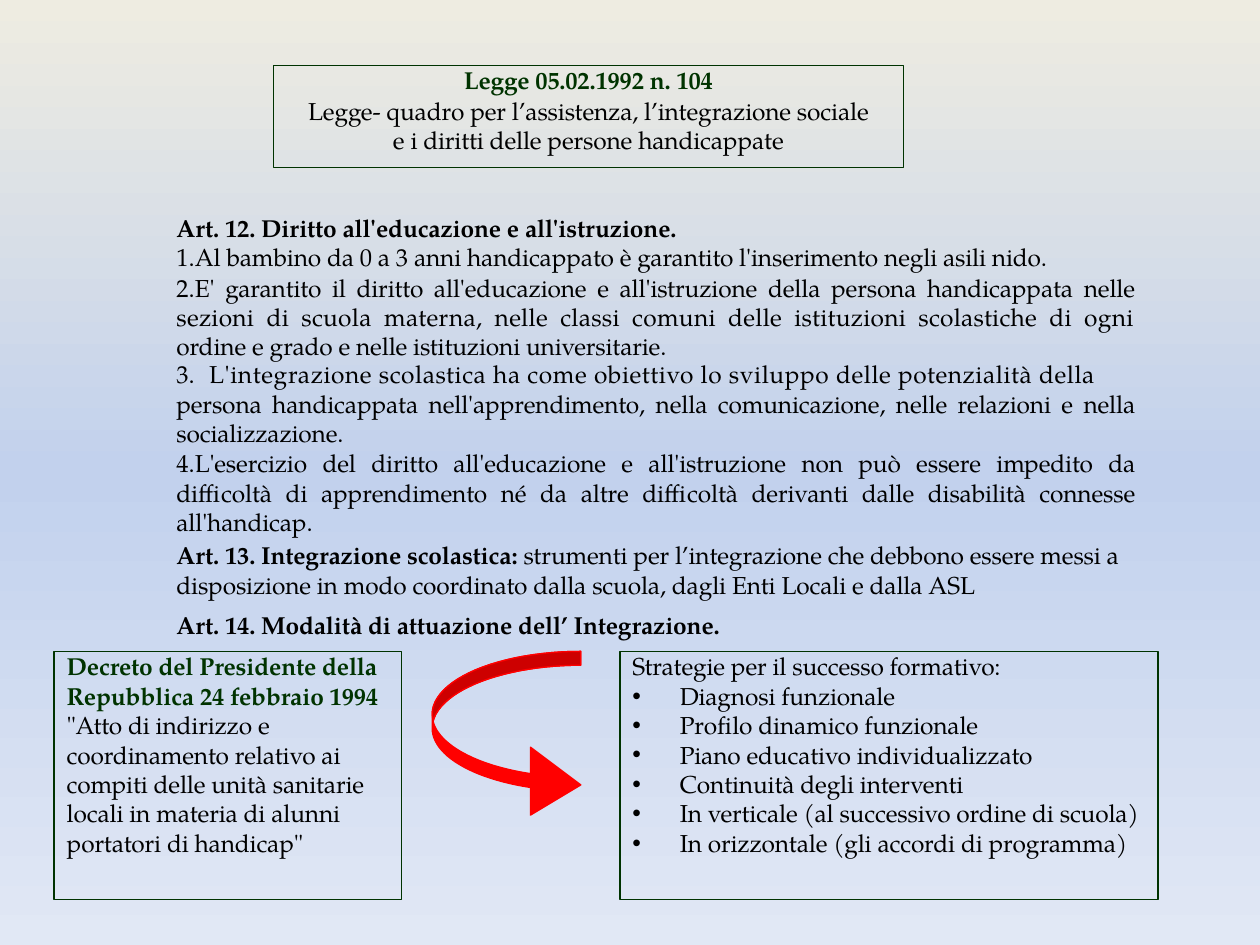
import copy
import math

import pptx
import pptx.dml.color
import pptx.enum.shapes
import pptx.enum.text
import pptx.oxml.ns
import pptx.util
from lxml import etree

CELL = pptx.util.Inches(0.1)
COLUMNS, ROWS = 100, 75
FONT = "TeX Gyre Pagella"
GREEN, BLACK, RED, DARK_RED = "003300", "000000", "FF0000", "CD0000"
ALIGN = pptx.enum.text.PP_ALIGN
BACKGROUND_STOPS = [(0, "EEECE1"), (0.5, "C2D1ED"), (1, "E1E8F5")]

STRATEGIES = [
    "Diagnosi funzionale",
    "Profilo dinamico funzionale",
    "Piano educativo individualizzato",
    "Continuità degli interventi",
    "In verticale (al successivo ordine di scuola)",
    "In orizzontale (gli accordi di programma)",
]


def color(value):
    return pptx.dml.color.RGBColor.from_string(value)


def cells(count):
    return pptx.util.Emu(round(count * CELL))


def set_background(slide):
    fill = slide.background.fill
    fill.gradient()
    fill.gradient_angle = 270
    stop_list = slide._element.find(".//" + pptx.oxml.ns.qn("a:gsLst"))
    stop_list.append(copy.deepcopy(stop_list[-1]))
    for stop, (position, value) in zip(fill.gradient_stops, BACKGROUND_STOPS):
        stop.position = position
        stop.color.rgb = color(value)


def prepare_frame(shape):
    frame = shape.text_frame
    frame.word_wrap = True
    frame.vertical_anchor = pptx.enum.text.MSO_ANCHOR.TOP
    frame.margin_left = frame.margin_right = 0
    frame.margin_top = frame.margin_bottom = 0
    return frame


def add_box(slide, left, top, width, height):
    shape = slide.shapes.add_shape(
        pptx.enum.shapes.MSO_SHAPE.RECTANGLE, *map(cells, (left, top, width, height))
    )
    shape.shadow.inherit = False
    shape.fill.background()
    shape.line.color.rgb = color(GREEN)
    shape.line.width = pptx.util.Pt(0.75)
    return prepare_frame(shape)


def add_text_area(slide, left, top, width, height):
    shape = slide.shapes.add_textbox(*map(cells, (left, top, width, height)))
    return prepare_frame(shape)


def add_run(paragraph, text, bold=False, value=BLACK, spacing=-10):
    run = paragraph.add_run()
    run.text = text
    run.font.name = FONT
    run.font.size = pptx.util.Pt(14)
    run.font.bold = bold
    run.font.color.rgb = color(value)
    run._r.get_or_add_rPr().set("spc", str(spacing))


def add_paragraph(frame, align=ALIGN.LEFT, line=None, before=0, left=0, first=0, right=0):
    started = len(frame.paragraphs) > 1 or frame.paragraphs[0].runs
    paragraph = frame.add_paragraph() if started else frame.paragraphs[0]
    paragraph.alignment = align
    if line:
        paragraph.line_spacing = pptx.util.Pt(line)
    paragraph.space_before = pptx.util.Pt(before)
    properties = paragraph._p.get_or_add_pPr()
    for name, count in (("marL", left), ("marR", right), ("indent", first)):
        properties.set(name, str(cells(count)))
    return paragraph


def add_mark(paragraph, tag, **attributes):
    properties = paragraph._p.get_or_add_pPr()
    mark = etree.SubElement(properties, pptx.oxml.ns.qn(tag))
    for name, value in attributes.items():
        mark.set(name, value)


def add_clause(frame, *runs, line=16.7, before=0, left=0.1, first=0, **numbering):
    paragraph = add_paragraph(frame, ALIGN.JUSTIFY, line, before, left, first)
    add_mark(paragraph, "a:buFont", typeface="+mj-lt")
    add_mark(paragraph, "a:buAutoNum", type="arabicPeriod", **numbering)
    for text, spacing in runs:
        add_run(paragraph, text, spacing=spacing)


def fill_heading(frame):
    paragraph = add_paragraph(frame, ALIGN.CENTER, 16.7)
    add_run(paragraph, "Legge 05.02.1992 n. 104", True, GREEN)
    paragraph = add_paragraph(frame, ALIGN.CENTER, 16.7, 0.6, left=2.3, right=2.3)
    add_run(paragraph, "Legge- quadro per l’assistenza, l’integrazione sociale "
                       "e i diritti delle persone handicappate")


def fill_articles(frame):
    paragraph = add_paragraph(frame, ALIGN.JUSTIFY, 16.8, left=0.1)
    add_run(paragraph, "Art. 12. Diritto all'educazione e all'istruzione.", True)
    add_clause(frame, ("Al bambino da 0 a 3 anni handicappato è garantito "
                       "l'inserimento negli asili nido.", -10), line=16.8)
    add_clause(
        frame,
        ("E' garantito il diritto all'educazione e all'istruzione della persona "
         "handicappata nelle ", -10),
        ("sezioni di scuola materna, nelle classi comuni delle istituzioni "
         "scolastiche di ogni ", 15),
        ("ordine e grado e nelle istituzioni universitarie.", -10),
        before=0.6,
    )
    add_clause(frame, ("L'integrazione scolastica ha come obiettivo lo sviluppo delle "
                       "potenzialità della", 30), line=16.2, left=2.7, first=-2.6)
    paragraph = add_paragraph(frame, ALIGN.JUSTIFY, left=0.1)
    add_run(paragraph, "persona handicappata nell'apprendimento, nella comunicazione, "
                       "nelle relazioni e nella socializzazione.")
    add_clause(frame, ("L'esercizio del diritto all'educazione e all'istruzione non può "
                       "essere impedito da difficoltà di apprendimento né da altre "
                       "difficoltà derivanti dalle disabilità connesse all'handicap.", -10),
               before=0.6, startAt="4")
    paragraph = add_paragraph(frame, before=2.2, left=0.1)
    add_run(paragraph, "Art. 13. Integrazione scolastica: ", True)
    add_run(paragraph, "strumenti per l’integrazione che debbono essere messi a disposizione "
                       "in modo coordinato dalla scuola, dagli Enti Locali e dalla ASL")
    paragraph = add_paragraph(frame, ALIGN.JUSTIFY, before=6.2, left=0.1)
    add_run(paragraph, "Art. 14. Modalità di attuazione dell’ Integrazione.", True)


def fill_strategies(frame):
    paragraph = add_paragraph(frame, line=16.8, left=1)
    add_run(paragraph, "Strategie per il successo formativo:")
    for strategy in STRATEGIES:
        paragraph = add_paragraph(frame, line=16.8, left=4.75, first=-3.75)
        add_mark(paragraph, "a:buFont", typeface="Arial")
        add_mark(paragraph, "a:buChar", char="•")
        add_run(paragraph, strategy)


def fill_decree(frame):
    paragraph = add_paragraph(frame, left=1)
    add_run(paragraph, "Decreto del Presidente della Repubblica 24 febbraio 1994 ", True, GREEN)
    add_run(paragraph, "\"Atto di indirizzo e coordinamento relativo ai compiti delle unità "
                       "sanitarie locali in materia di alunni portatori di handicap\"")


def arc(center_row, start, end, steps=24):
    angles = [math.radians(start + (end - start) * i / steps) for i in range(steps + 1)]
    return [(46.1 - 11.8 * math.cos(a), center_row + 5 * math.sin(a)) for a in angles]


def add_outline(slide, points, value):
    corners = [(cells(x), cells(y)) for x, y in points]
    builder = slide.shapes.build_freeform(*corners[0])
    builder.add_line_segments(corners[1:], close=True)
    shape = builder.convert_to_shape()
    shape.shadow.inherit = False
    shape.fill.solid()
    shape.fill.fore_color.rgb = color(value)
    shape.line.color.rgb = color(RED)
    shape.line.width = pptx.util.Pt(0.75)


def add_curved_arrow(slide):
    outer, inner, crossing, neck = 56.7, 57.8, 6.3, 70.2
    head = [(42.1, 64.7), (46.1, 62.3), (42.1, 59.3)]
    upper_edge = arc(outer, -90, 0)
    inner_edge = arc(inner, -crossing, -90)
    lower_band = arc(inner, 0, neck) + head + arc(outer, neck, crossing)
    add_outline(slide, upper_edge + lower_band + inner_edge, RED)
    add_outline(slide, upper_edge + inner_edge, DARK_RED)


def main():
    presentation = pptx.Presentation()
    presentation.slide_width = cells(COLUMNS)
    presentation.slide_height = cells(ROWS)
    slide = presentation.slides.add_slide(presentation.slide_layouts[6])
    set_background(slide)
    fill_heading(add_box(slide, 21.7, 5.2, 50, 8.1))
    fill_articles(add_text_area(slide, 13.9, 16.9, 76.2, 33.7))
    fill_strategies(add_box(slide, 49.2, 51.7, 42.7, 19.7))
    add_curved_arrow(slide)
    fill_decree(add_box(slide, 4.3, 51.7, 27.6, 19.7))
    presentation.save("out.pptx")


if __name__ == "__main__":
    main()
